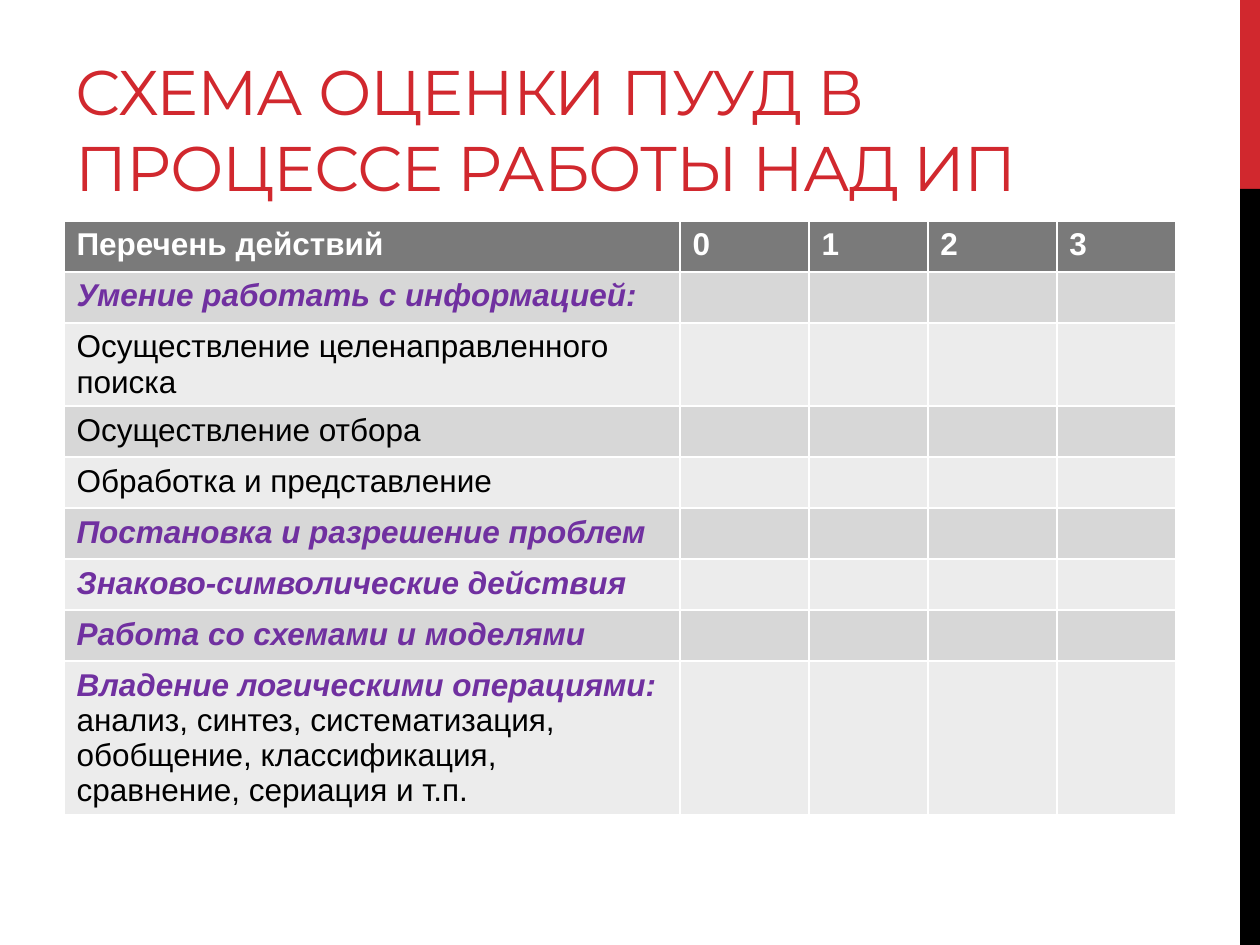
"""Builds the slide with the assessment scheme for cognitive learning actions."""

from dataclasses import dataclass

from pptx import Presentation
from pptx.dml.color import RGBColor
from pptx.enum.shapes import MSO_SHAPE as Shape
from pptx.enum.text import MSO_ANCHOR as Anchor, MSO_AUTO_SIZE as AutoSize, PP_ALIGN as Align
from pptx.slide import Slide
from pptx.table import _Cell as Cell
from pptx.util import Emu, Pt

RED = RGBColor(0xD1, 0x28, 0x2E)
BLACK = RGBColor(0x00, 0x00, 0x00)
WHITE = RGBColor(0xFF, 0xFF, 0xFF)
PURPLE = RGBColor(0x70, 0x30, 0xA0)
HEADER_GREY = RGBColor(0x7A, 0x7A, 0x7A)
BAND_GREYS = (RGBColor(0xD7, 0xD7, 0xD7), RGBColor(0xEC, 0xEC, 0xEC))

PX_PER_INCH = 126
COLUMN_WIDTHS = (616, 129, 119, 129, 119)
ROW_HEIGHT = 51
TITLE = "СХЕМА ОЦЕНКИ ПУУД В ПРОЦЕССЕ РАБОТЫ НАД ИП"
HEADINGS = ("Перечень действий", "0", "1", "2", "3")


@dataclass(frozen=True)
class Box:
    left: int
    top: int
    width: int
    height: int

    def emu(self) -> tuple[Emu, ...]:
        return tuple(map(px, (self.left, self.top, self.width, self.height)))


@dataclass(frozen=True)
class Bar:
    box: Box
    color: RGBColor


@dataclass(frozen=True)
class Action:
    skill: str = ""
    detail: str = ""


BARS = (
    Bar(Box(1240, 0, 20, 189), RED),
    Bar(Box(1240, 189, 20, 756), BLACK),
)
TITLE_BOX = Box(63, 21, 1113, 189)
ACTIONS = (
    Action(skill="Умение работать с информацией:"),
    Action(detail="Осуществление целенаправленного поиска"),
    Action(detail="Осуществление отбора"),
    Action(detail="Обработка и представление"),
    Action(skill="Постановка и разрешение проблем"),
    Action(skill="Знаково-символические действия"),
    Action(skill="Работа со схемами и моделями"),
    Action(
        skill="Владение логическими операциями: ",
        detail="анализ, синтез, систематизация, обобщение, классификация, "
        "сравнение, сериация и т.п.",
    ),
)
TABLE_BOX = Box(64, 221, sum(COLUMN_WIDTHS), ROW_HEIGHT * (len(ACTIONS) + 1))


def px(length: int) -> Emu:
    return Emu(round(length * 914400 / PX_PER_INCH))


def draw_bar(slide: Slide, bar: Bar) -> None:
    stripe = slide.shapes.add_shape(Shape.RECTANGLE, *bar.box.emu())
    stripe.shadow.inherit = False
    stripe.fill.solid()
    stripe.fill.fore_color.rgb = bar.color
    stripe.line.fill.background()


def write_title(slide: Slide) -> None:
    title = slide.shapes.title
    title.left, title.top, title.width, title.height = TITLE_BOX.emu()
    frame = title.text_frame
    frame.auto_size = AutoSize.NONE
    frame.word_wrap = True
    frame.vertical_anchor = Anchor.BOTTOM
    heading = frame.paragraphs[0]
    heading.alignment = Align.LEFT
    heading.font.name, heading.font.size = "Montserrat", Pt(36)
    heading.font.color.rgb = RED
    wording = heading.add_run()
    wording.text = TITLE
    wording.font._element.set("spc", "-60")


def fill_cell(cell: Cell, color: RGBColor) -> None:
    cell.fill.solid()
    cell.fill.fore_color.rgb = color
    font = cell.text_frame.paragraphs[0].font
    font.name, font.size = "Arial", Pt(18)


def write_run(cell: Cell, text: str, color: RGBColor, bold: bool, italic: bool) -> None:
    if not text:
        return
    run = cell.text_frame.paragraphs[0].add_run()
    run.text = text
    run.font.color.rgb = color
    run.font.bold, run.font.italic = bold, italic


def draw_table(slide: Slide) -> None:
    table = slide.shapes.add_table(
        len(ACTIONS) + 1, len(COLUMN_WIDTHS), *TABLE_BOX.emu()
    ).table
    for column, width in zip(table.columns, COLUMN_WIDTHS):
        column.width = px(width)
    for row in table.rows:
        row.height = px(ROW_HEIGHT)

    for cell, heading in zip(table.rows[0].cells, HEADINGS):
        fill_cell(cell, HEADER_GREY)
        write_run(cell, heading, WHITE, bold=True, italic=False)

    for index, action in enumerate(ACTIONS):
        cells = table.rows[index + 1].cells
        for cell in cells:
            fill_cell(cell, BAND_GREYS[index % 2])
        write_run(cells[0], action.skill, PURPLE, bold=True, italic=True)
        write_run(cells[0], action.detail, BLACK, bold=False, italic=False)


def main() -> None:
    deck = Presentation()
    deck.slide_width, deck.slide_height = px(1260), px(945)
    slide = deck.slides.add_slide(deck.slide_layouts[5])
    for bar in BARS:
        draw_bar(slide, bar)
    write_title(slide)
    draw_table(slide)
    deck.save("out.pptx")


if __name__ == "__main__":
    main()
